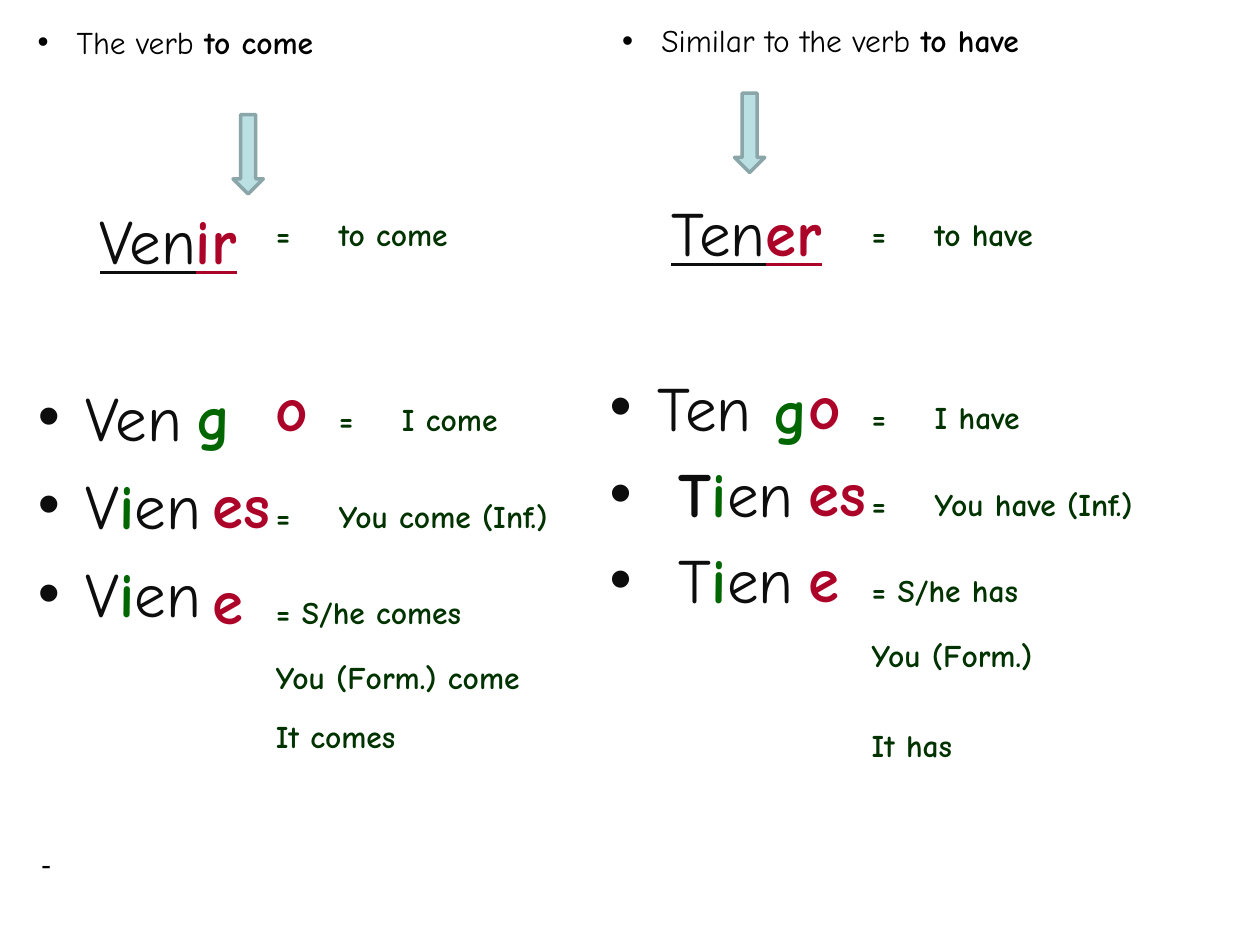
from lxml import etree
from pptx import Presentation
from pptx.dml.color import RGBColor
from pptx.enum import shapes, text
from pptx.oxml.ns import qn
from pptx.util import Inches, Pt

BLACK = RGBColor(0x00, 0x00, 0x00)
INK = RGBColor(0x0D, 0x0D, 0x0D)
RED = RGBColor(0xAC, 0x04, 0x28)
GREEN = RGBColor(0x00, 0x66, 0x00)
DARK_GREEN = RGBColor(0x00, 0x33, 0x00)
ARROW_FILL = RGBColor(0xBB, 0xE0, 0xE3)
ARROW_LINE = RGBColor(0x8A, 0xA6, 0xA8)
FONT = "Comic Neue"

# style name: size, colour, bold, underline
STYLES = {
    "intro": (18, BLACK, False, False),
    "intro bold": (18, BLACK, True, False),
    "infinitive": (36, INK, False, True),
    "infinitive ending": (36, RED, True, True),
    "stem": (36, INK, False, False),
    "stem bold": (36, INK, True, False),
    "change": (36, GREEN, True, False),
    "ending": (36, RED, True, False),
    "meaning": (18, DARK_GREEN, True, False),
}

# Boxes are left, top, width, height in inches.
# Stems: space before, hanging indent, runs.
# Meanings: space before, tab stops, ending, meaning.
VERBS = [
    dict(
        intro=("The verb ", "to come"), intro_box=(0.2, 0.13, 4.53, 0.4),
        arrow=(1.85, 0.91), g_box=(1.46, 2.95, 0.71, 0.7),
        infinitive=("Ven", "ir"), stem_box=(0.2, 1.55, 4.73, 5.04),
        stems=[
            (57.6, 0.38, [("Ven", "stem")]),
            (7.2, 0.38, [("V", "stem"), ("i", "change"), ("en", "stem")]),
            (7.2, 0.38, [("V", "stem"), ("i", "change"), ("en", "stem")]),
        ],
        meaning_box=(1.59, 1.66, 3.41, 5.08),
        meanings=[
            (0, (0.54, 0.82), "", "\t=\tto come"),
            (66, (0.18, 0.62, 0.9), "\to", "\t=\tI come"),
            (12, (0.64, 0.92), "es", "\t=\tYou come (Inf.)"),
            (12, (0.61,), "e", "\t= S/he comes"),
            (12, (0.8,), "", "\tYou (Form.) come"),
            (12, (0.8,), "", "\tIt comes"),
        ],
    ),
    dict(
        intro=("Similar to the verb ", "to have"), intro_box=(4.84, 0.12, 4.53, 0.4),
        arrow=(5.83, 0.74), g_box=(6.04, 2.9, 0.71, 0.7),
        infinitive=("Ten", "er"), stem_box=(4.74, 1.49, 4.73, 5.04),
        stems=[
            (56.4, 0.38, [("Ten", "stem")]),
            (6, 0.55, [("T", "stem bold"), ("i", "change"), ("en", "stem")]),
            (6, 0.55, [("T", "stem"), ("i", "change"), ("en", "stem")]),
        ],
        meaning_box=(6.32, 1.66, 3.21, 5.08),
        meanings=[
            (0, (0.54, 0.82), "", "\t=\tto have"),
            (65, (0.44, 0.72), "o", "\t=\tI have"),
            (6, (0.64, 0.92), "es", "\t=\tYou have (Inf.)"),
            (6, (0.61,), "e", "\t= S/he has"),
            (12, (0.8,), "", "\tYou (Form.)"),
            (30, (0.89,), "", "\tIt has"),
        ],
    ),
]


def place(sp, box):
    sp.left, sp.top, sp.width, sp.height = [Inches(v) for v in box]
    tf = sp.text_frame
    tf.word_wrap = True
    tf.auto_size = text.MSO_AUTO_SIZE.NONE
    tf.vertical_anchor = text.MSO_ANCHOR.TOP
    return tf


def add_text_box(s, box):
    return place(s.shapes.add_textbox(0, 0, 0, 0), box)


def add_paragraph(tf, runs, before=0, margin=0, bullet=False, tabs=()):
    """Fill the first empty paragraph or add one; a bullet hangs in the margin."""
    p = tf.paragraphs[0] if not tf.text else tf.add_paragraph()
    p.space_before = Pt(before)
    for content, style in runs:
        if not content:
            continue
        r = p.add_run()
        r.text = content
        r.font.name = FONT
        size, r.font.color.rgb, r.font.bold, r.font.underline = STYLES[style]
        r.font.size = Pt(size)
    pPr = p._p.get_or_add_pPr()
    pPr.set("marL", str(Inches(margin)))
    pPr.set("indent", str(-Inches(margin) if bullet else 0))
    if bullet:
        etree.SubElement(pPr, qn("a:buFont"), typeface="Arial")
        etree.SubElement(pPr, qn("a:buChar"), char="•")
    else:
        etree.SubElement(pPr, qn("a:buNone"))
    if tabs:
        tab_list = etree.SubElement(pPr, qn("a:tabLst"))
        for stop in tabs:
            etree.SubElement(tab_list, qn("a:tab"), pos=str(Inches(stop)), algn="l")


def add_arrow(s, left, top):
    sp = s.shapes.add_shape(shapes.MSO_SHAPE.DOWN_ARROW, Inches(left), Inches(top),
                            Inches(0.24), Inches(0.63))
    sp.shadow.inherit = False
    sp.fill.solid()
    sp.fill.fore_color.rgb = ARROW_FILL
    sp.line.color.rgb = ARROW_LINE
    sp.line.width = Pt(2)


def add_verb(s, verb, stem_tf, meaning_tf):
    first, last = verb["infinitive"]
    add_paragraph(stem_tf, [(first, "infinitive"), (last, "infinitive ending")], margin=0.49)
    for before, margin, runs in verb["stems"]:
        add_paragraph(stem_tf, runs, before, margin, bullet=True)
    for before, tabs, ending, meaning in verb["meanings"]:
        add_paragraph(meaning_tf, [(ending, "ending"), (meaning, "meaning")], before, tabs=tabs)
    add_paragraph(add_text_box(s, verb["g_box"]), [("g", "change")])
    add_paragraph(add_text_box(s, verb["intro_box"]),
                  zip(verb["intro"], ("intro", "intro bold")), margin=0.31, bullet=True)
    add_arrow(s, *verb["arrow"])


def main():
    prs = Presentation()
    prs.slide_width, prs.slide_height = Inches(10), Inches(7.5)
    s = prs.slides.add_slide(prs.slide_layouts[3])
    title = s.shapes.title._element
    title.getparent().remove(title)

    come, have = VERBS
    add_verb(s, come, place(s.placeholders[1], come["stem_box"]),
             place(s.placeholders[2], come["meaning_box"]))
    add_verb(s, have, add_text_box(s, have["stem_box"]),
             add_text_box(s, have["meaning_box"]))

    dash = add_text_box(s, (0.23, 6.66, 8.5, 0.4))
    add_paragraph(dash, [("-", "intro")])
    dash.paragraphs[0].runs[0].font.name = "Calibri"
    prs.save("out.pptx")


if __name__ == "__main__":
    main()
